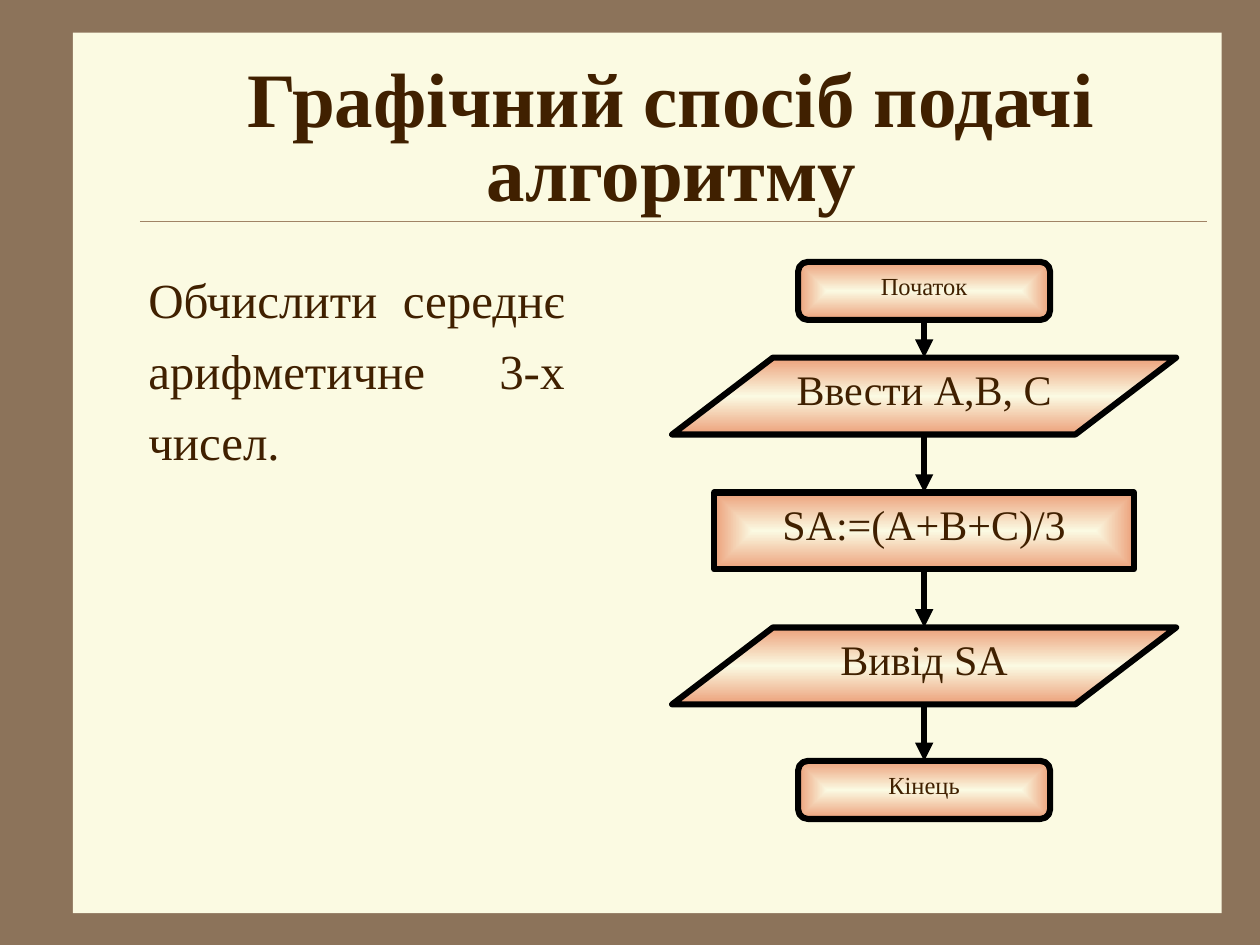
from lxml import etree
from pptx import Presentation
from pptx.dml.color import RGBColor
from pptx.enum import shapes, text
from pptx.oxml import parse_xml
from pptx.oxml.ns import nsdecls, qn
from pptx.util import Cm, Pt

BROWN = RGBColor(0x8C, 0x73, 0x5A)
CREAM = RGBColor(0xFB, 0xFA, 0xE2)
PEACH = RGBColor(0xEC, 0xA0, 0x7A)
RULE = RGBColor(0xA0, 0x83, 0x66)
INK = RGBColor(0x40, 0x20, 0x00)
BLACK = RGBColor(0, 0, 0)

CENTER_X = 18.63
TERMINAL = shapes.MSO_SHAPE.FLOWCHART_ALTERNATE_PROCESS
DATA = shapes.MSO_SHAPE.FLOWCHART_DATA
PROCESS = shapes.MSO_SHAPE.RECTANGLE

# shape, text, size, top, width, height
STEPS = [
    (TERMINAL, "Початок", 14, 5.28, 5.08, 1.17),
    (DATA, "Ввести А,В, С", 24, 7.21, 10.16, 1.55),
    (PROCESS, "SA:=(A+B+C)/3", 24, 9.93, 8.46, 1.55),
    (DATA, "Вивід SA", 24, 12.65, 10.16, 1.55),
    (TERMINAL, "Кінець", 14, 15.34, 5.08, 1.17),
]


def write(sp, content, size, align=text.PP_ALIGN.CENTER, bold=False,
          spacing=1.0, anchor=text.MSO_ANCHOR.TOP):
    tf = sp.text_frame
    tf.word_wrap = True
    tf.auto_size = text.MSO_AUTO_SIZE.NONE
    tf.vertical_anchor = anchor
    p = tf.paragraphs[0]
    p.alignment = align
    p.line_spacing = spacing
    r = p.add_run()
    r.text = content
    r.font.name = "Times New Roman"
    r.font.size = Pt(size)
    r.font.bold = bold
    r.font.color.rgb = INK


def add_line(x1, y1, x2, y2, color, width):
    line = s.shapes.add_connector(shapes.MSO_CONNECTOR.STRAIGHT,
                                  Cm(x1), Cm(y1), Cm(x2), Cm(y2))
    line.line.color.rgb = color
    line.line.width = Pt(width)
    etree.SubElement(line._element.spPr, qn("a:effectLst"))
    return line


prs = Presentation()
prs.slide_width, prs.slide_height = Cm(25.4), Cm(19.05)
s = prs.slides.add_slide(prs.slide_layouts[5])
s.background.fill.solid()
s.background.fill.fore_color.rgb = BROWN

# Page panel goes behind the title
panel = s.shapes.add_shape(PROCESS, Cm(1.47), Cm(0.66), Cm(23.16), Cm(17.75))
panel.shadow.inherit = False
panel.fill.solid()
panel.fill.fore_color.rgb = CREAM
panel.line.fill.background()
s.shapes._spTree.insert(2, panel._element)
add_line(2.82, 4.45, 24.33, 4.45, RULE, 0.25)

title = s.shapes.title
title.left, title.top, title.width, title.height = Cm(2.74), Cm(1.27), Cm(21.59), Cm(3.18)
write(title, "Графічний спосіб подачі алгоритму", 44, bold=True, spacing=0.8,
      anchor=text.MSO_ANCHOR.MIDDLE)

task = s.shapes.add_textbox(Cm(2.74), Cm(5.08), Cm(8.89), Cm(11.43))
write(task, "Обчислити середнє арифметичне 3-х чисел.", 28,
      align=text.PP_ALIGN.JUSTIFY, spacing=1.2)

# Flowchart blocks
for kind, label, size, top, width, height in STEPS:
    sp = s.shapes.add_shape(kind, Cm(CENTER_X - width / 2), Cm(top), Cm(width), Cm(height))
    sp.shadow.inherit = False
    sp.fill.gradient()
    for stop, color in zip(sp.fill.gradient_stops, (CREAM, PEACH)):
        stop.color.rgb = color
    grad = sp._element.spPr.find(qn("a:gradFill"))
    grad.replace(grad.find(qn("a:lin")), parse_xml(
        f'<a:path {nsdecls("a")} path="shape">'
        '<a:fillToRect l="50000" t="50000" r="50000" b="50000"/></a:path>'))
    sp.line.color.rgb = BLACK
    sp.line.width = Pt(3.5)
    write(sp, label, size)

# Arrows from each block to the next
for (*_, top, _, height), (*_, next_top, _, _) in zip(STEPS, STEPS[1:]):
    arrow = add_line(CENTER_X, top + height, CENTER_X, next_top, BLACK, 3.5)
    etree.SubElement(arrow.line._get_or_add_ln(), qn("a:tailEnd"), type="triangle")

prs.save("out.pptx")
